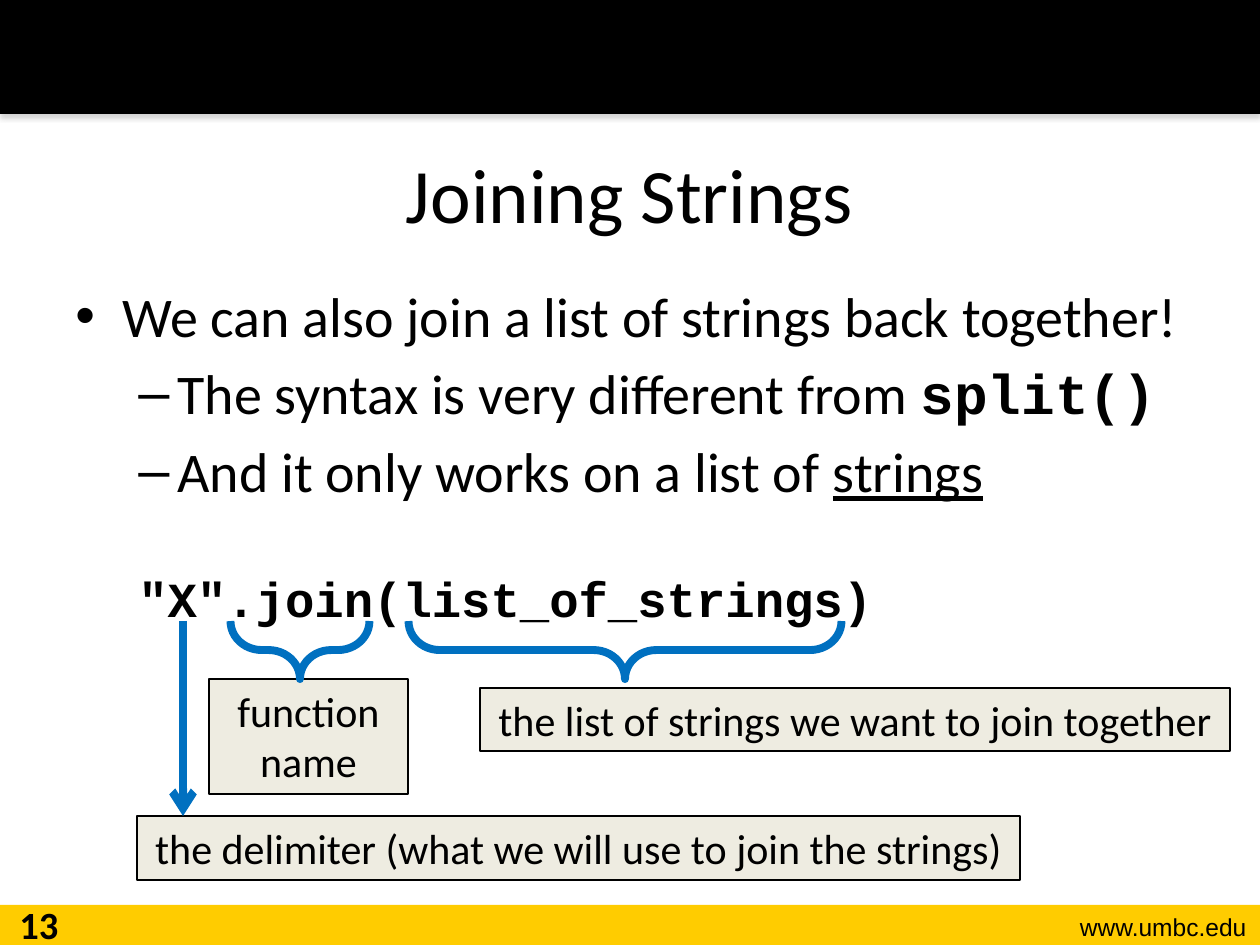
from lxml import etree
from pptx import Presentation, util as u
from pptx.dml.color import RGBColor
from pptx.enum import shapes, text
from pptx.oxml.ns import qn

PX = 914400 / 126
BLUE, CREAM, YELLOW, BLACK = "0070C0", "EEECE1", "FFCC00", "000000"
BODY, CODE = "Calibri", "Courier New"

# runs, bullet, left margin px, first-line indent px, space before pt
BODY_LINES = [
    ([("We can also join a list of strings back together!", {})], "•", 47, -47, 0),
    ([("The syntax is very different from ", {}),
      ("split()", dict(font=CODE, bold=True))], "–", 102, -39, 6),
    ([("And it only works on a list of ", {}),
      ("strings", dict(underline=True))], "–", 102, -39, 6),
    ([('"X".join(list_of_strings)', dict(font=CODE, size=28, bold=True))],
     None, 63, 0, 37),
]
LABELS = [
    ("the delimiter (what we will use to join the strings)", (137, 816, 883, 64)),
    ("function name", (209, 679, 199, 115)),
    ("the list of strings we want to join together", (480, 688, 750, 63)),
]
BRACES = [(300, 139), (625, 433)]  # centre x, span
BRACE_Y, BRACE_DEPTH = 650, 58


def px(*values):
    return [u.Emu(round(v * PX)) for v in values]


def rgb(value):
    return RGBColor.from_string(value)


def add_run(p, words, font=BODY, size=32, bold=False, underline=False):
    r = p.add_run()
    r.text = words
    f = r.font
    f.name, f.size, f.bold, f.underline = font, u.Pt(size), bold, underline
    f.color.rgb = rgb(BLACK)


def write(sp, words, align="CENTER", anchor="TOP", **fmt):
    tf = sp.text_frame
    tf.word_wrap = True
    tf.vertical_anchor = text.MSO_ANCHOR[anchor]
    p = tf.paragraphs[0]
    p.alignment = text.PP_ALIGN[align]
    add_run(p, words, **fmt)


def text_box(s, box, words, **fmt):
    write(s.shapes.add_textbox(*px(*box)), words, **fmt)


def rect(s, box, fill, line=None):
    sp = s.shapes.add_shape(shapes.MSO_SHAPE.RECTANGLE, *px(*box))
    sp.shadow.inherit = False
    sp.fill.solid()
    sp.fill.fore_color.rgb = rgb(fill)
    if line:
        sp.line.color.rgb = rgb(line)
        sp.line.width = u.Pt(0.75)
    else:
        sp.line.fill.background()
    return sp


def blue_line(sp):
    sp.line.color.rgb = rgb(BLUE)
    sp.line.width = u.Pt(4.5)


def drop_shadow(sp):
    effects = sp._element.spPr.find(qn("a:effectLst"))
    shadow = etree.SubElement(effects, qn("a:outerShdw"), blurRad="40000",
                              dist="23000", dir="5400000", rotWithShape="0")
    color = etree.SubElement(shadow, qn("a:srgbClr"), val="808080")
    etree.SubElement(color, qn("a:alpha"), val="35000")


def body(s, box):
    tf = s.shapes.add_textbox(*px(*box)).text_frame
    tf.word_wrap = True
    for i, (runs, bullet, margin, indent, before) in enumerate(BODY_LINES):
        p = tf.add_paragraph() if i else tf.paragraphs[0]
        p.space_before = u.Pt(before)
        pPr = p._p.get_or_add_pPr()
        left, first = px(margin, indent)
        pPr.set("marL", str(left))
        pPr.set("indent", str(first))
        if bullet:
            etree.SubElement(pPr, qn("a:buFont"), typeface="Arial")
            etree.SubElement(pPr, qn("a:buChar"), char=bullet)
        for words, fmt in runs:
            add_run(p, words, **fmt)


def brace(s, cx, span):
    """Left brace turned to point down, centred on cx."""
    sp = s.shapes.add_shape(
        shapes.MSO_SHAPE.LEFT_BRACE,
        *px(cx - BRACE_DEPTH / 2, BRACE_Y - span / 2, BRACE_DEPTH, span))
    sp.rotation = 270
    sp.adjustments[0] = 0.54
    sp.shadow.inherit = False
    sp.fill.background()
    blue_line(sp)


def arrow(s, x1, y1, x2, y2):
    c = s.shapes.add_connector(shapes.MSO_CONNECTOR.STRAIGHT, *px(x1, y1, x2, y2))
    blue_line(c)
    etree.SubElement(c.line._get_or_add_ln(), qn("a:tailEnd"), type="arrow")
    etree.SubElement(c._element.spPr, qn("a:effectLst"))


def main():
    prs = Presentation()
    prs.slide_width, prs.slide_height = px(1260, 945)
    s = prs.slides.add_slide(prs.slide_layouts[6])

    rect(s, (0, 905, 1260, 40), YELLOW)
    drop_shadow(rect(s, (0, 0, 1260, 114), BLACK))
    text_box(s, (1008, 906, 251, 42), "www.umbc.edu",
             align="RIGHT", font="Arial", size=14)
    text_box(s, (63, 114, 1134, 158), "Joining Strings", anchor="MIDDLE", size=44)
    body(s, (63, 275, 1134, 620))
    text_box(s, (0, 895, 78, 50), "13", size=22, bold=True)

    for words, box in LABELS:
        write(rect(s, box, CREAM, BLACK), words, size=24)
    for cx, span in BRACES:
        brace(s, cx, span)
    arrow(s, 183, 621, 183, 816)

    prs.save("out.pptx")


if __name__ == "__main__":
    main()
